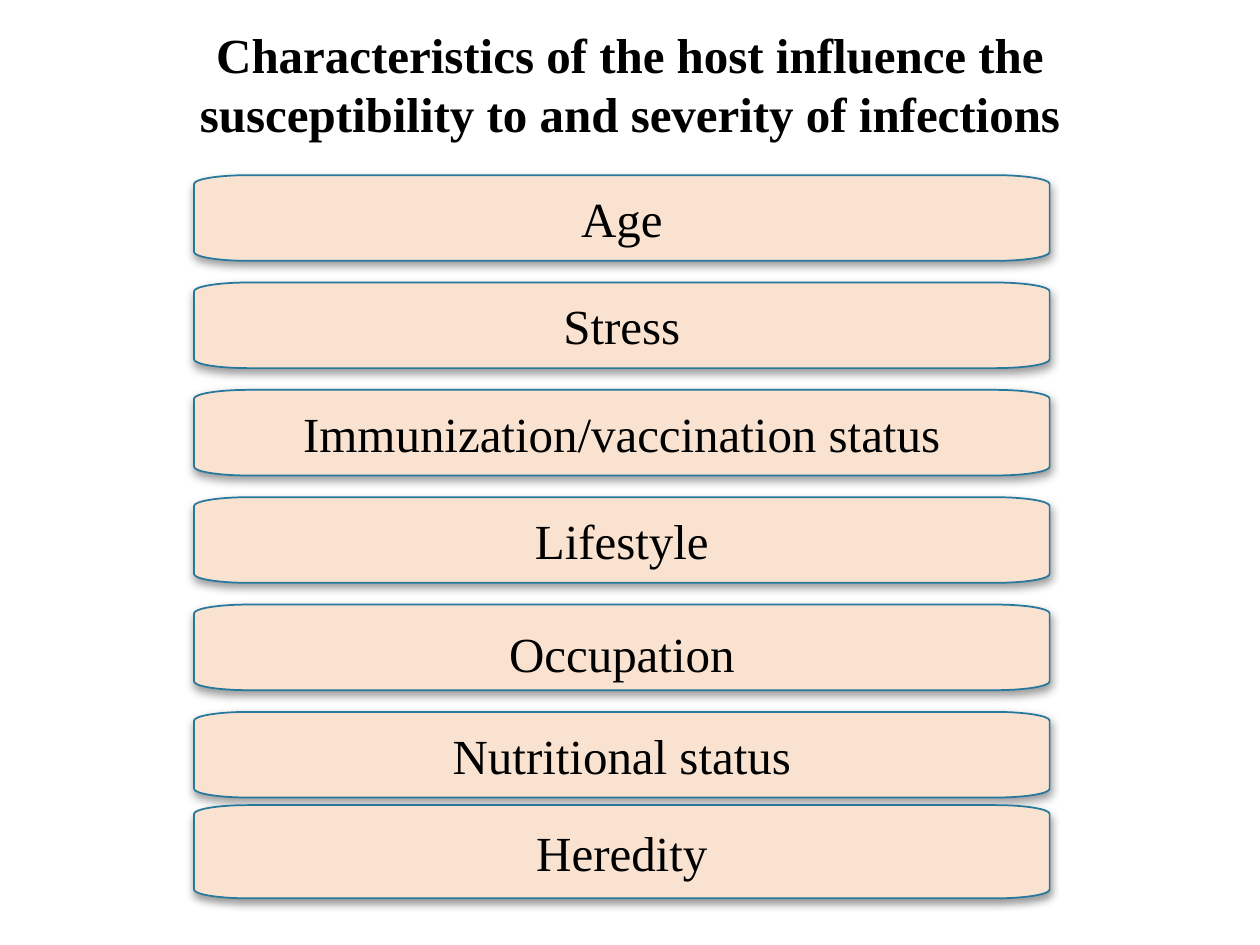
from dataclasses import dataclass

from lxml.etree import SubElement
from pptx import Presentation
from pptx.dml.color import RGBColor
from pptx.enum.text import MSO_ANCHOR, PP_ALIGN
from pptx.oxml.ns import qn
from pptx.util import Inches, Pt


@dataclass(frozen=True)
class Theme:
    font: str = "Times New Roman"
    size: int = 28
    text: str = "000000"
    fill: str = "F9E2D0"
    line: str = "26789C"
    shadow: str = "000000"


THEME = Theme()
TITLE = ("Characteristics of the host influence the "
         "susceptibility to and severity of infections")
FACTORS = ["Age", "Stress", "Immunization/vaccination status",
           "Lifestyle", "Occupation", "Nutritional status"]
BAR_LEFT, BAR_WIDTH, BAR_HEIGHT = 1.54, 6.79, 0.68
FIRST_TOP, LAST_TOP = 1.39, 5.65
CORNER_WIDTH, CORNER_HEIGHT = 0.43, 0.07
CURVE_RATIO = 0.55


def write_text(shape, text, anchor, margins, bold=False, line_spacing=None):
    frame = shape.text_frame
    frame.word_wrap = True
    frame.vertical_anchor = anchor
    frame.margin_left = frame.margin_right = Inches(margins[0])
    frame.margin_top = frame.margin_bottom = Inches(margins[1])
    paragraph = frame.paragraphs[0]
    paragraph.alignment = PP_ALIGN.CENTER
    if line_spacing:
        paragraph.line_spacing = line_spacing
    run = paragraph.add_run()
    run.text = text
    run.font.name = THEME.font
    run.font.size = Pt(THEME.size)
    run.font.bold = bold
    run.font.color.rgb = RGBColor.from_string(THEME.text)


def add_title(slide):
    box = slide.shapes.add_textbox(Inches(0.6), Inches(0.12), Inches(8.8), Inches(1.06))
    write_text(box, TITLE, MSO_ANCHOR.BOTTOM, (0.1, 0.05), bold=True)


def corner_points(x, y, toward_x, toward_y):
    reach_x, reach_y = toward_x * CORNER_WIDTH, toward_y * CORNER_HEIGHT
    rest = 1 - CURVE_RATIO
    points = [(x, y + reach_y), (x, y + reach_y * rest),
              (x + reach_x * rest, y), (x + reach_x, y)]
    return points if toward_x == toward_y else points[::-1]


def bar_outline(top, height):
    right, bottom = BAR_LEFT + BAR_WIDTH, top + height
    corners = [(BAR_LEFT, top, 1, 1), (right, top, -1, 1),
               (right, bottom, -1, -1), (BAR_LEFT, bottom, 1, -1)]
    return [(Inches(x), Inches(y)) for corner in corners
            for x, y in corner_points(*corner)]


def curve_corners(shape):
    outline = shape._element.spPr.find(".//" + qn("a:path"))
    segments = outline.findall(qn("a:lnTo"))
    for start in range(0, len(segments), 4):
        curve = SubElement(outline, qn("a:cubicBezTo"))
        segments[start].addprevious(curve)
        for segment in segments[start:start + 3]:
            curve.append(segment[0])
            outline.remove(segment)


def add_shadow(shape):
    shape.shadow.inherit = False
    effects = shape._element.spPr.find(qn("a:effectLst"))
    shadow = SubElement(effects, qn("a:outerShdw"), blurRad=str(Pt(5)),
                        dist=str(Pt(2)), dir="5400000", rotWithShape="0")
    color = SubElement(shadow, qn("a:srgbClr"), val=THEME.shadow)
    SubElement(color, qn("a:alpha"), val="40000")


def add_bar(slide, text, top, height=BAR_HEIGHT, line_spacing=None):
    points = bar_outline(top, height)
    builder = slide.shapes.build_freeform(*points[0])
    builder.add_line_segments(points[1:], close=True)
    bar = builder.convert_to_shape()
    curve_corners(bar)
    bar.fill.solid()
    bar.fill.fore_color.rgb = RGBColor.from_string(THEME.fill)
    bar.line.color.rgb = RGBColor.from_string(THEME.line)
    bar.line.width = Pt(1)
    add_shadow(bar)
    write_text(bar, text, MSO_ANCHOR.MIDDLE, (0.03, 0.03), line_spacing=line_spacing)


def main():
    presentation = Presentation()
    presentation.slide_width = Inches(10)
    presentation.slide_height = Inches(7.5)
    slide = presentation.slides.add_slide(presentation.slide_layouts[6])
    add_title(slide)
    pitch = (LAST_TOP - FIRST_TOP) / (len(FACTORS) - 1)
    for index, factor in enumerate(FACTORS):
        line_spacing = 1.2 if factor == "Occupation" else None
        add_bar(slide, factor, FIRST_TOP + index * pitch, line_spacing=line_spacing)
    add_bar(slide, "Heredity", 6.39, height=0.74)
    presentation.save("out.pptx")


if __name__ == "__main__":
    main()
